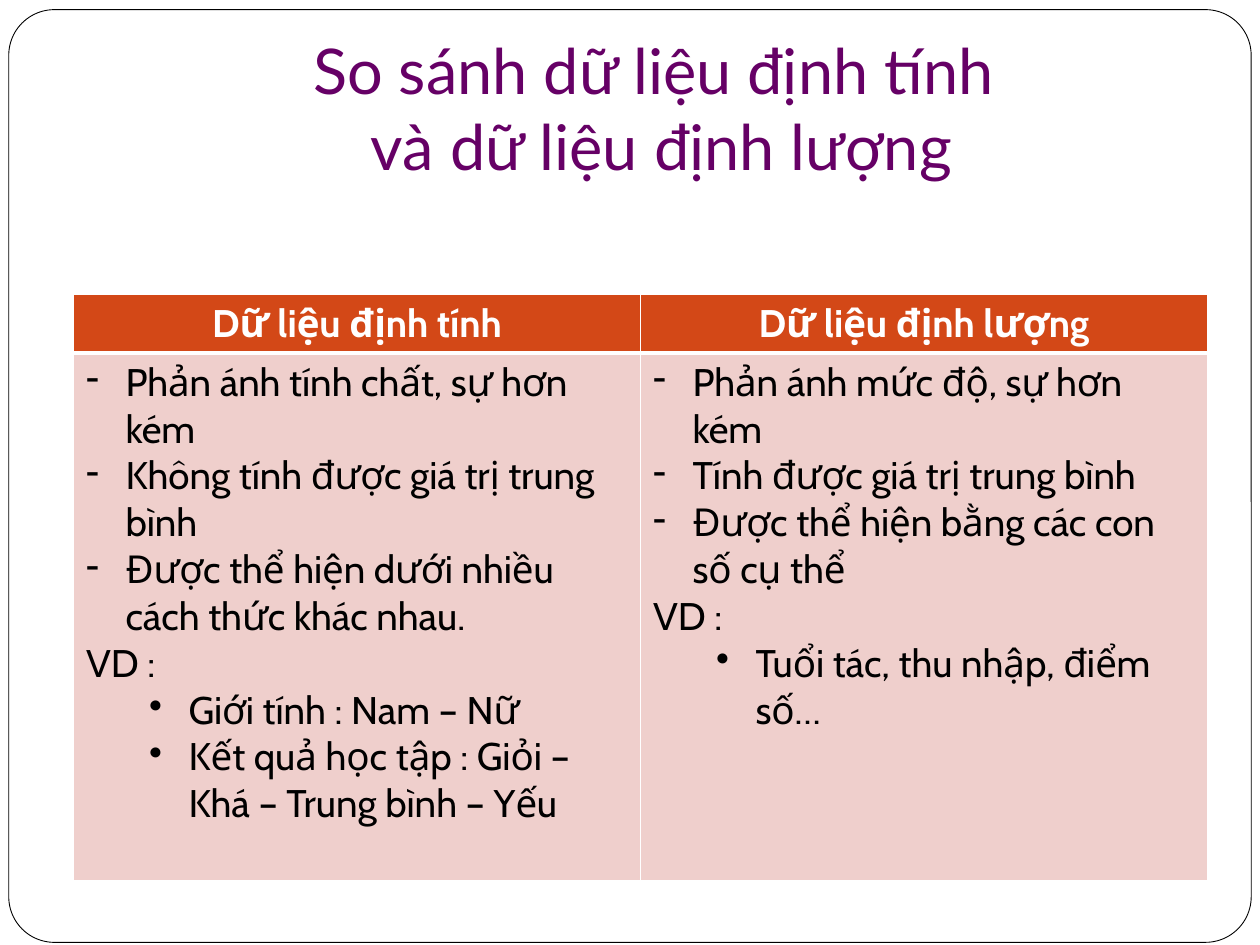
import pptx
import pptx.dml.color
import pptx.enum.shapes
import pptx.enum.text
import pptx.oxml.ns
import pptx.util
from lxml import etree

Pt = pptx.util.Pt
CENTER = pptx.enum.text.PP_ALIGN.CENTER

DASH, BULLET, PLAIN = "-", "•", None
INDENTS = {DASH: 22.5, BULLET: 58.5}
HANGING = 22.5

COLUMNS = [
    ("Dữ liệu định tính", [
        (DASH, "Phản ánh tính chất, sự hơn kém"),
        (DASH, "Không tính được giá trị trung bình"),
        (DASH, "Được thể hiện dưới nhiều cách thức khác nhau."),
        (PLAIN, "VD :"),
        (BULLET, "Giới tính : Nam – Nữ"),
        (BULLET, "Kết quả học tập : Giỏi – Khá – Trung bình – Yếu"),
    ]),
    ("Dữ liệu định lượng", [
        (DASH, "Phản ánh mức độ, sự hơn kém"),
        (DASH, "Tính được giá trị trung bình"),
        (DASH, "Được thể hiện bằng các con số cụ thể"),
        (PLAIN, "VD :"),
        (BULLET, "Tuổi tác, thu nhập, điểm số…"),
    ]),
]

HEADER_FORMAT = {"name": "Cabin", "size": Pt(22), "bold": True}
BODY_FORMAT = {"name": "Cabin", "size": Pt(22), "bold": False}
TITLE_FORMAT = {"name": "Lato", "size": Pt(36), "bold": False}


def rgb(value):
    return pptx.dml.color.RGBColor.from_string(value)


def add_xml(parent, tag, **attributes):
    return etree.SubElement(parent, pptx.oxml.ns.qn(tag), attributes)


def format_font(font, values, color):
    for name, value in values.items():
        setattr(font, name, value)
    font.color.rgb = rgb(color)


def add_frame(slide):
    frame = slide.shapes.add_shape(
        pptx.enum.shapes.MSO_SHAPE.ROUNDED_RECTANGLE,
        Pt(5), Pt(5.5), Pt(710), Pt(533))
    frame.adjustments[0] = 0.049
    frame.shadow.inherit = False
    frame.fill.solid()
    frame.fill.fore_color.rgb = rgb("FFFFFF")
    frame.line.color.rgb = rgb("000000")
    frame.line.width = Pt(0.5)


def add_title(slide, text):
    title = slide.shapes.add_textbox(Pt(72), Pt(21.6), Pt(612), Pt(90)).text_frame
    layout = {"word_wrap": True, "margin_bottom": Pt(7.2),
              "vertical_anchor": pptx.enum.text.MSO_ANCHOR.BOTTOM}
    for name, value in layout.items():
        setattr(title, name, value)
    heading = title.paragraphs[0]
    heading.text = text
    heading.alignment = CENTER
    for run in heading.runs:
        format_font(run.font, TITLE_FORMAT, "660066")


def style_cell(cell, fill, top, bottom):
    properties = cell._tc.get_or_add_tcPr()
    for side, width in zip("LRTB", (1, 1, top, bottom)):
        border = add_xml(properties, f"a:ln{side}", w=str(Pt(width)))
        add_xml(add_xml(border, "a:solidFill"), "a:srgbClr", val="FFFFFF")
    cell.fill.solid()
    cell.fill.fore_color.rgb = rgb(fill)


def write_item(paragraph, marker, text):
    run = paragraph.add_run()
    run.text = text
    format_font(run.font, BODY_FORMAT, "000000")
    if marker is not PLAIN:
        paragraph.level = 1 if marker == BULLET else 0
        properties = paragraph._p.get_or_add_pPr()
        properties.set("marL", str(Pt(INDENTS[marker])))
        properties.set("indent", str(-Pt(HANGING)))
        add_xml(properties, "a:buChar", char=marker)


def add_comparison(slide):
    table = slide.shapes.add_table(
        2, len(COLUMNS), Pt(42), Pt(168), Pt(648), Pt(335)).table
    table.rows[0].height = Pt(33.5)
    table.rows[1].height = Pt(301.5)
    for index, (heading, items) in enumerate(COLUMNS):
        header, body = table.cell(0, index), table.cell(1, index)
        style_cell(header, "D34817", 1, 3)
        style_cell(body, "EFCFCC", 3, 1)
        label = header.text_frame.paragraphs[0]
        label.alignment = CENTER
        run = label.add_run()
        run.text = heading
        format_font(run.font, HEADER_FORMAT, "FFFFFF")
        for number, (marker, text) in enumerate(items):
            frame = body.text_frame
            paragraph = frame.add_paragraph() if number else frame.paragraphs[0]
            write_item(paragraph, marker, text)


def main():
    deck = pptx.Presentation()
    deck.slide_width, deck.slide_height = Pt(720), Pt(540)
    slide = deck.slides.add_slide(deck.slide_layouts[6])
    add_frame(slide)
    add_title(slide, "So sánh dữ liệu định tính \vvà dữ liệu định lượng")
    add_comparison(slide)
    deck.save("out.pptx")


if __name__ == "__main__":
    main()
